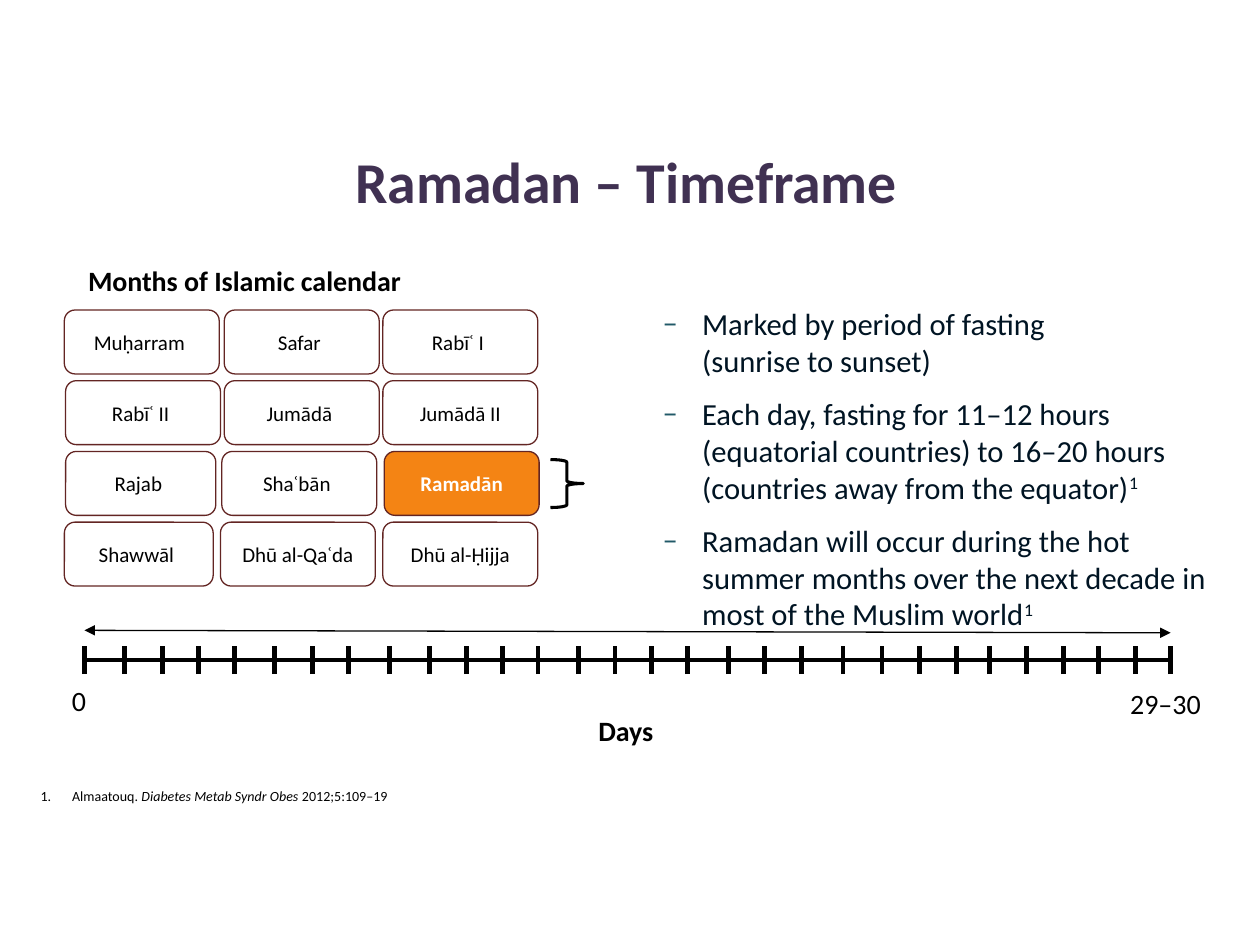
from lxml.etree import SubElement
from pptx import Presentation
from pptx.dml.color import RGBColor
from pptx.enum.shapes import MSO_CONNECTOR as Connector, MSO_SHAPE as Shape
from pptx.enum.text import MSO_ANCHOR as Anchor, PP_ALIGN as Align
from pptx.oxml.ns import qn
from pptx.util import Pt

BLACK, WHITE = "000000", "FFFFFF"
PURPLE, NAVY, TEAL = "403152", "001423", "215968"
MAROON, ORANGE = "632523", "F48414"

# Each row: left edges, width of the first box, names
MONTHS = [
    ([36.8, 128.2, 218.8], 88.5, ["Muḥarram ", "Safar ", "Rabīʿ I "]),
    ([37.5, 128.2, 218.8], 88.5, ["Rabīʿ II ", "Jumādā ", "Jumādā II"]),
    ([37.5, 126.8, 219.6], 85.8, ["Rajab ", "Shaʿbān ", "Ramadān"]),
    ([36.8, 126, 218.8], 85, ["Shawwāl ", "Dhū al-Qaʿda", "Dhū al-Ḥijja"]),
]
FACTS = [
    ["Marked by period of fasting \v(sunrise to sunset)"],
    ["Each day, fasting for 11–12 hours (equatorial countries) "
     "to 16–20 hours (countries away from the equator)", "1"],
    ["Ramadan will occur during the hot summer months over the next decade "
     "in most of the Muslim world", "1"],
]
DAY_MARKS = [
    48.3, 71.3, 92.9, 113.4, 133.9, 157, 178.6, 199.1, 222.5, 245.5,
    266.4, 287.3, 307.4, 330.5, 351.4, 372.2, 393.1, 416.2, 437, 457.9,
    481.7, 504, 525.6, 546.5, 565.2, 586.8, 607.7, 627.8, 648.7, 668.9,
]


def color(code):
    return RGBColor.from_string(code)


class SlideBuilder:
    font = "Calibri"

    def __init__(self, slide):
        self.slide = slide

    def run(self, paragraph, text, size, code=BLACK, bold=False, italic=False, raised=False):
        """Add one run; a vertical tab in the text becomes a line break."""
        for index, line in enumerate(text.split("\v")):
            if index:
                paragraph.add_line_break()
            run = paragraph.add_run()
            run.text = line
            font = run.font
            font.name, font.size, font.bold, font.italic = self.font, Pt(size), bold, italic
            font.color.rgb = color(code)
            if raised:
                font._element.set("baseline", "30000")

    def bullet(self, paragraph, margin, indent, tag, code=BLACK, **attributes):
        """Give a paragraph a hanging indent and a bullet of the given kind."""
        properties = paragraph._p.get_or_add_pPr()
        properties.set("marL", str(Pt(margin)))
        properties.set("indent", str(Pt(-indent)))
        bullet_color = SubElement(properties, qn("a:buClr"))
        SubElement(bullet_color, qn("a:srgbClr"), val=code)
        SubElement(properties, qn("a:buFont"), typeface=self.font)
        SubElement(properties, qn(tag), **attributes)

    def text_box(self, left, top, width, height, wrap=False):
        frame = self.slide.shapes.add_textbox(Pt(left), Pt(top), Pt(width), Pt(height)).text_frame
        frame.word_wrap = wrap
        return frame

    def label(self, text, left, top, width, height=26.6, size=16, **style):
        frame = self.text_box(left, top, width, height)
        self.run(frame.paragraphs[0], text, size, **style)

    def shape(self, kind, left, top, width, height, line, weight, fill=None):
        shape = self.slide.shapes.add_shape(kind, Pt(left), Pt(top), Pt(width), Pt(height))
        shape.shadow.inherit = False
        shape.line.color.rgb = color(line)
        shape.line.width = Pt(weight)
        if fill:
            shape.fill.solid()
            shape.fill.fore_color.rgb = color(fill)
        else:
            shape.fill.background()
        return shape

    def month(self, name, left, top, width, height, current):
        shape = self.shape(Shape.ROUNDED_RECTANGLE, left, top, width, height,
                           MAROON, 0.75, ORANGE if current else None)
        frame = shape.text_frame
        frame.vertical_anchor = Anchor.MIDDLE
        frame.paragraphs[0].alignment = Align.CENTER
        self.run(frame.paragraphs[0], name, 12, WHITE if current else BLACK, bold=current)

    def line(self, x1, y1, x2, y2, weight, arrows=False):
        connector = self.slide.shapes.add_connector(
            Connector.STRAIGHT, Pt(x1), Pt(y1), Pt(x2), Pt(y2))
        connector.line.color.rgb = color(BLACK)
        connector.line.width = Pt(weight)
        if arrows:
            for tag in ("a:headEnd", "a:tailEnd"):
                SubElement(connector.line._get_or_add_ln(), qn(tag), type="triangle")
        SubElement(connector._element.spPr, qn("a:effectLst"))


def add_facts(builder):
    frame = builder.text_box(335.6, 170.8, 370, 232.6, wrap=True)
    for index, (text, *reference) in enumerate(FACTS):
        paragraph = frame.add_paragraph() if index else frame.paragraphs[0]
        paragraph.space_before, paragraph.space_after = Pt(3.5), Pt(6)
        builder.bullet(paragraph, 58.5, 22.5, "a:buChar", TEAL, char="–")
        builder.run(paragraph, text, 17.5, NAVY)
        for number in reference:
            builder.run(paragraph, number, 17.5, NAVY, raised=True)


def add_calendar(builder):
    builder.label("Months of Islamic calendar", 43.2, 146.9, 195.8, bold=True)
    for row, (lefts, first_width, names) in enumerate(MONTHS):
        widths = [first_width, 88.5, 88.5]
        for left, width, name in zip(lefts, widths, names):
            builder.month(name, left, 177.2 + 40.4 * row, width, 36.5, name == "Ramadān")
    builder.shape(Shape.RIGHT_BRACE, 314.6, 262.6, 18.7, 27.4, BLACK, 1.75)


def add_timeline(builder):
    start, end, axis = DAY_MARKS[0], DAY_MARKS[-1], 377.1
    builder.line(start, axis, end, axis, 2.75)
    for x in DAY_MARKS:
        builder.line(x, axis + 8.2, x, axis - 8.2, 2.75)
    builder.line(start, 360.2, end, 361.6, 0.75, arrows=True)
    builder.label("0", 34, 387.2, 23)
    builder.label("29–30", 638.8, 388.8, 55.4)
    builder.label("Days", 334.8, 404.1, 46.8, bold=True)


def add_reference(builder):
    paragraph = builder.text_box(16.1, 446.4, 636.5, 17.3, wrap=True).paragraphs[0]
    builder.bullet(paragraph, 18, 18, "a:buAutoNum", type="arabicPeriod")
    builder.run(paragraph, "Almaatouq. ", 8)
    builder.run(paragraph, "Diabetes Metab Syndr Obes", 8, italic=True)
    builder.run(paragraph, " 2012;5:109–19", 8)


def main():
    presentation = Presentation()
    presentation.slide_width, presentation.slide_height = Pt(720), Pt(540)
    builder = SlideBuilder(presentation.slides.add_slide(presentation.slide_layouts[6]))

    title = builder.text_box(22.8, 87.8, 670.3, 31, wrap=True)
    title.vertical_anchor = Anchor.MIDDLE
    title.paragraphs[0].alignment = Align.CENTER
    builder.run(title.paragraphs[0], "Ramadan – Timeframe", 33, PURPLE, bold=True)

    add_facts(builder)
    add_calendar(builder)
    add_timeline(builder)
    add_reference(builder)
    presentation.save("out.pptx")


if __name__ == "__main__":
    main()
